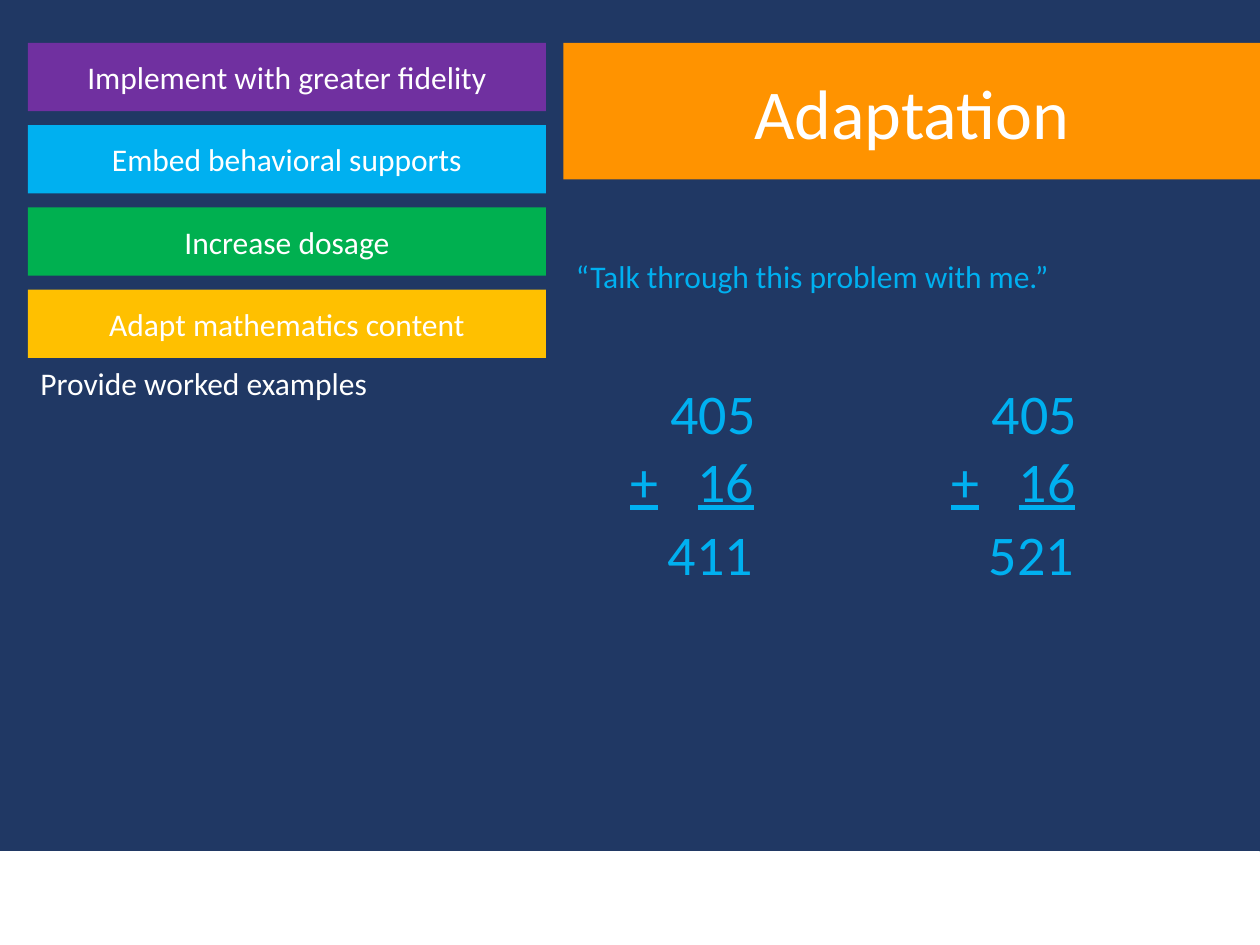
from pptx import Presentation
from pptx.dml.color import RGBColor
from pptx.enum import shapes, text
from pptx.oxml import parse_xml
from pptx.oxml import ns
from pptx.util import Pt

WHITE, NAVY, ORANGE, SKY = "FFFFFF", "203864", "FF9300", "00B0F0"
CENTER, LEFT, RIGHT = text.PP_ALIGN.CENTER, text.PP_ALIGN.LEFT, text.PP_ALIGN.RIGHT


def color(value):
    return RGBColor.from_string(value)


class SlideBuilder:
    """Hold the style and the current slide, and add its elements."""

    font = "Calibri"

    def __init__(self, slide, background):
        self.slide = slide
        self.fill(slide.background, background)

    def fill(self, item, value):
        item.fill.solid()
        item.fill.fore_color.rgb = color(value)

    def format(self, paragraph, size, ink, alignment):
        paragraph.alignment = alignment
        for run in paragraph.runs:
            run.font.name = self.font
            run.font.size = Pt(size)
            run.font.color.rgb = color(ink)

    def title(self, words, left, top, width, height):
        shape = self.slide.shapes.title
        shape.left, shape.top, shape.width, shape.height = map(Pt, (left, top, width, height))
        self.fill(shape, ORANGE)
        shape.text_frame.text = words
        shape.text_frame.vertical_anchor = text.MSO_ANCHOR.MIDDLE
        self.format(shape.text_frame.paragraphs[0], 40, WHITE, CENTER)

    def bar(self, words, left, top, width, height, fill):
        shape = self.slide.shapes.add_shape(
            shapes.MSO_SHAPE.RECTANGLE, *map(Pt, (left, top, width, height)))
        shape.shadow.inherit = False
        self.fill(shape, fill)
        shape.line.fill.background()
        if words:
            shape.text_frame.text = words
            shape.text_frame.vertical_anchor = text.MSO_ANCHOR.MIDDLE
            self.format(shape.text_frame.paragraphs[0], 18, WHITE, CENTER)
        return shape

    def label(self, words, left, top, width, height, size, ink, alignment=LEFT):
        shape = self.slide.shapes.add_textbox(*map(Pt, (left, top, width, height)))
        frame = shape.text_frame
        frame.word_wrap = True
        frame.text = words
        for paragraph in frame.paragraphs:
            self.format(paragraph, size, ink, alignment)
        return frame

    def addition(self, left, top, first, second, answer):
        frame = self.label(f"{first}\n+\t{second}", left, top, 86, 85, 32, SKY, RIGHT)
        addend = frame.paragraphs[1]
        addend.alignment = LEFT
        addend._p.get_or_add_pPr().append(parse_xml(
            f'<a:tabLst {ns.nsdecls("a")}><a:tab pos="{Pt(71)}" algn="r"/></a:tabLst>'))
        for run in addend.runs:
            run.font.underline = True
        self.label(answer, left + 21.5, top + 80.5, 64, 46, 32, SKY)


def main():
    presentation = Presentation()
    presentation.slide_width, presentation.slide_height = Pt(720), Pt(540)
    slide = presentation.slides.add_slide(presentation.slide_layouts[5])
    builder = SlideBuilder(slide, NAVY)

    footer = builder.bar("", 0, 486.5, 719.5, 53.5, WHITE)
    footer.line.color.rgb = color(WHITE)
    footer.line.width = Pt(1)
    builder.title("Adaptation", 322, 24.5, 398, 78)

    strategies = [
        ("Implement with greater fidelity", "7030A0"),
        ("Embed behavioral supports", SKY),
        ("Increase dosage", "00B050"),
        ("Adapt mathematics content", "FFC000"),
    ]
    for index, (words, fill) in enumerate(strategies):
        builder.bar(words, 16, 24.5 + 47 * index, 296, 39, fill)

    builder.label("Provide worked examples", 16, 204.5, 296, 29, 18, WHITE)
    builder.label("“Talk through this problem with me.”", 322, 143.5, 288, 29, 18, SKY)
    for left, answer in ((353, "411"), (536.5, "521")):
        builder.addition(left, 213, "405", "16", answer)

    presentation.save("out.pptx")


if __name__ == "__main__":
    main()
